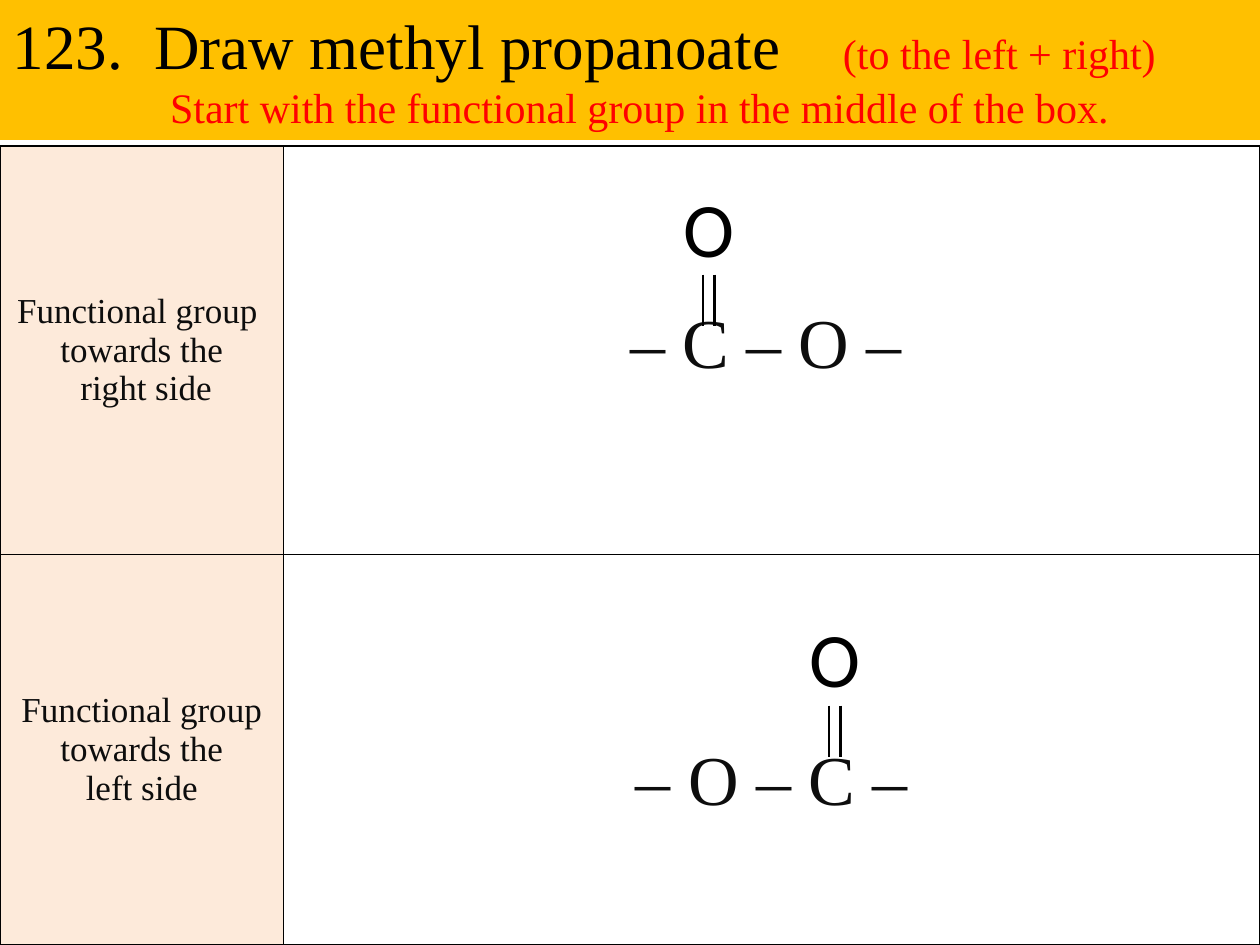
from lxml.etree import SubElement
from pptx import Presentation
from pptx.dml.color import RGBColor
from pptx.enum.shapes import MSO_CONNECTOR
from pptx.enum.text import MSO_ANCHOR, PP_ALIGN
from pptx.oxml import parse_xml
from pptx.oxml.ns import nsdecls, qn
from pptx.util import Inches, Pt

COLORS = {"banner": "FFC000", "label": "FDEADA", "paper": "FFFFFF",
          "ink": "000000", "soft": "0D0D0D", "hint": "FF0000"}
SERIF, SANS = "Times New Roman", "Calibri"
WIDTH, HEIGHT = 10, 7.5
COLS, ROWS = (2.25, 7.75), (3.24, 3.1)
TABLE_TOP = HEIGHT - sum(ROWS)

# label, formula, alignment, left margin, top margin
GROUPS = [
    ("Functional group \vtowards the\v right side", "– C – O –", PP_ALIGN.LEFT, 2.75, 1.27),
    ("Functional group\v towards the \vleft side", "– O – C –", PP_ALIGN.CENTER, 0.1, 1.5),
]
OXYGENS = [(5.33, 1.38), (6.33, 4.8)]


def rgb(name):
    return RGBColor.from_string(COLORS[name])


def add_text(p, text, size, font=SERIF, color="ink", align=PP_ALIGN.LEFT):
    """Append text to a paragraph; a vertical tab breaks the line."""
    p.alignment = align
    for i, line in enumerate(text.split("\v")):
        if i:
            p.add_line_break()
        r = p.add_run()
        r.text = line
        r.font.size, r.font.name = Pt(size), font
        r.font.color.rgb = rgb(color)


def add_banner(s):
    title = s.shapes.title
    title.left, title.top, title.width, title.height = (
        Inches(v) for v in (0, 0, WIDTH, 1.11))
    title.fill.solid()
    title.fill.fore_color.rgb = rgb("banner")
    tf = title.text_frame
    tf.vertical_anchor = MSO_ANCHOR.TOP
    p = tf.paragraphs[0]
    add_text(p, "123.  Draw methyl propanoate", 36)
    add_text(p, "\t(to the left + right)", 24, color="hint")
    tabs = SubElement(p._p.get_or_add_pPr(), qn("a:tabLst"))
    SubElement(tabs, qn("a:tab"), pos=str(Inches(6.59)), algn="l")
    p = tf.add_paragraph()
    add_text(p, "Start with the functional group in the middle of the box.", 24, color="hint")
    p._p.get_or_add_pPr().set("marL", str(Inches(1.25)))


def format_cell(cell, fill):
    """Fill the cell and draw a thin line on all four sides."""
    cell.fill.solid()
    cell.fill.fore_color.rgb = rgb(fill)
    for i, side in enumerate("LRTB"):
        cell._tc.get_or_add_tcPr().insert(i, parse_xml(
            f'<a:ln{side} {nsdecls("a")} w="{Pt(1)}"><a:solidFill>'
            f'<a:srgbClr val="{COLORS["ink"]}"/></a:solidFill></a:ln{side}>'))


def add_group_table(s):
    table = s.shapes.add_table(len(ROWS), len(COLS), 0, Inches(TABLE_TOP),
                               Inches(WIDTH), Inches(sum(ROWS))).table
    for col, width in zip(table.columns, COLS):
        col.width = Inches(width)
    for row, height, group in zip(table.rows, ROWS, GROUPS):
        row.height = Inches(height)
        text, formula, align, left, top = group
        label, box = row.cells
        format_cell(label, "label")
        label.vertical_anchor = MSO_ANCHOR.MIDDLE
        add_text(label.text_frame.paragraphs[0], text, 20, color="soft",
                 align=PP_ALIGN.CENTER)
        format_cell(box, "paper")
        box.margin_left, box.margin_top = Inches(left), Inches(top)
        add_text(box.text_frame.paragraphs[0], formula, 40, color="soft", align=align)


def add_double_bonded_oxygen(s, x, y):
    shapes = s.shapes.add_group_shape().shapes
    for dx in (0.25, 0.34):
        bond = shapes.add_connector(MSO_CONNECTOR.STRAIGHT, Inches(x + dx), Inches(y + 0.8),
                                    Inches(x + dx), Inches(y + 1.21))
        bond.line.color.rgb = rgb("ink")
        bond.line.width = Pt(1.5)
        SubElement(bond._element.spPr, qn("a:effectLst"))
    tf = shapes.add_textbox(Inches(x), Inches(y), Inches(0.75), Inches(0.84)).text_frame
    tf.word_wrap = True
    add_text(tf.paragraphs[0], "O", 44, font=SANS)


def main():
    prs = Presentation()
    prs.slide_width, prs.slide_height = Inches(WIDTH), Inches(HEIGHT)
    s = prs.slides.add_slide(prs.slide_layouts[5])
    add_banner(s)
    add_group_table(s)
    for x, y in OXYGENS:
        add_double_bonded_oxygen(s, x, y)
    prs.save("out.pptx")


if __name__ == "__main__":
    main()
